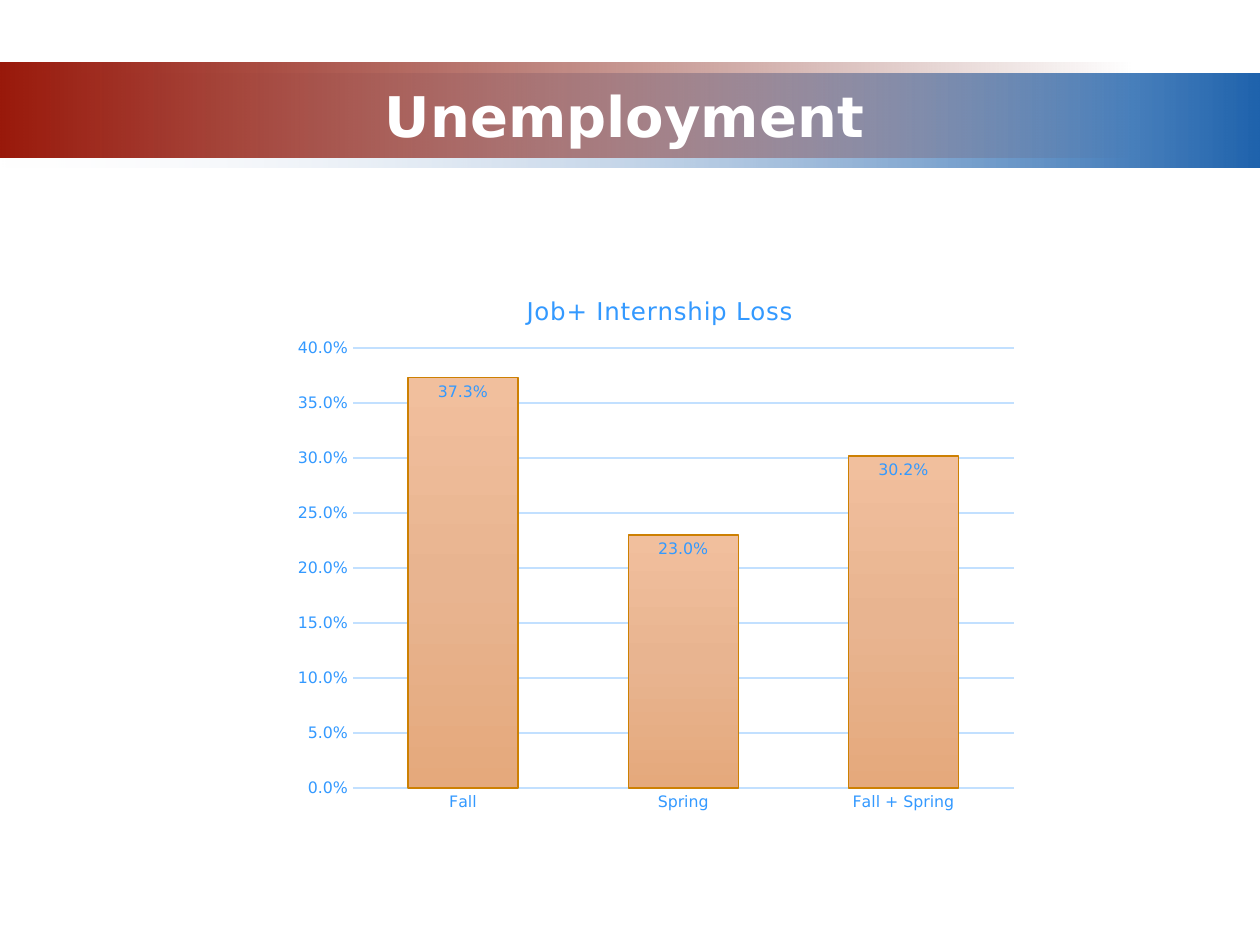
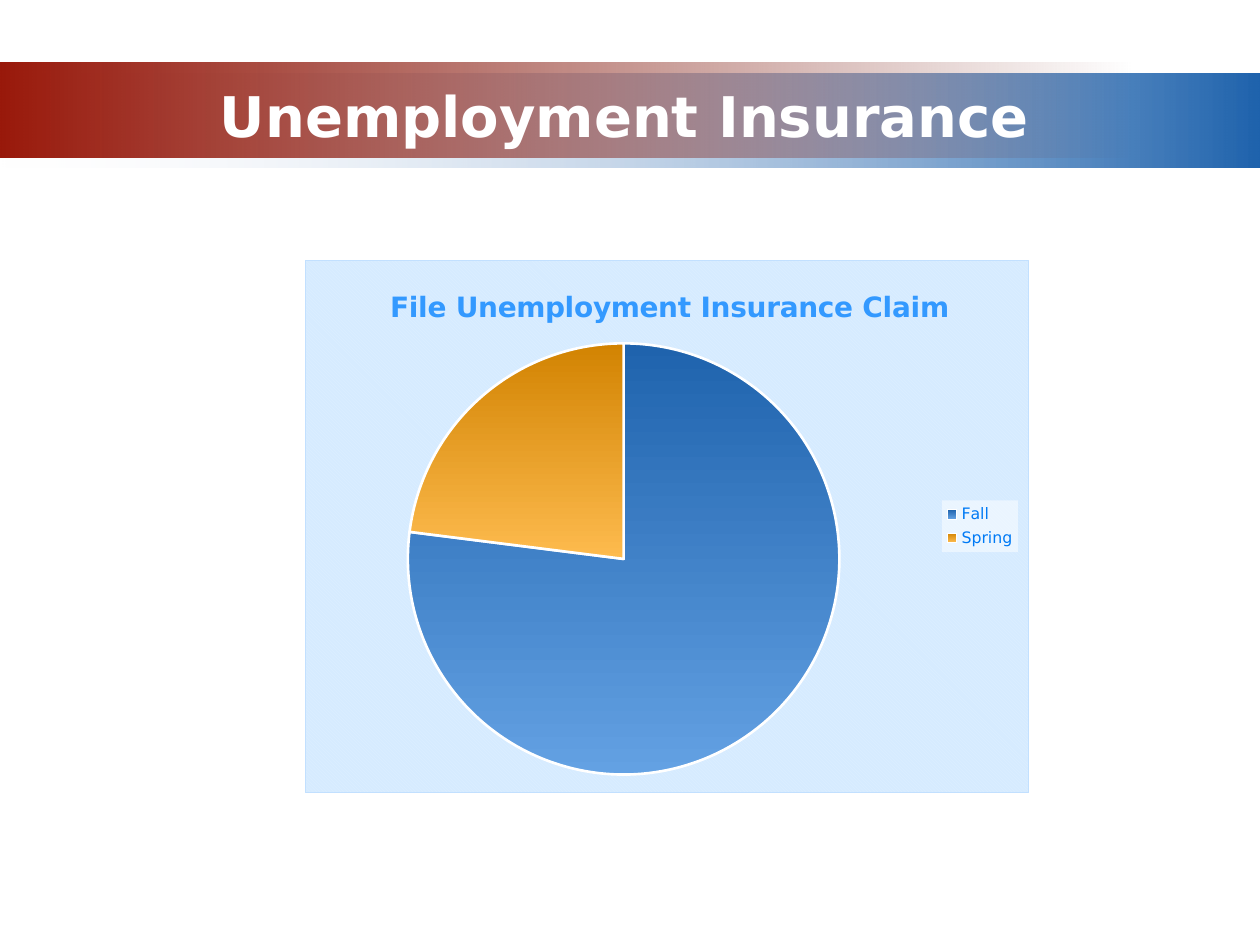
from dataclasses import dataclass

from lxml import etree
from pptx import Presentation
from pptx import util as u
from pptx.chart.data import CategoryChartData
from pptx.dml.color import RGBColor
from pptx.enum import chart as ce, shapes, text
from pptx.oxml.ns import nsdecls, qn
from pptx.oxml import parse_xml

Pt = u.Pt


@dataclass(frozen=True)
class Theme:
    font: str = "DejaVu Sans"
    white: str = "FFFFFF"
    base_text: str = "003366"
    chart_text: str = "3399FF"
    legend_text: str = "007AF5"
    rule: str = "C2E0FF"
    bar_line: str = "CD8002"
    panel: str = "D6EBFF"
    panel_stripe: str = "E0F0FF"
    title_size: int = 32
    bar_title_size: int = 14
    pie_title_size: int = 16
    base_size: int = 10
    label_size: int = 9
    hairline: float = 0.75
    slice_line: float = 1.5
    blue_band: tuple = ((0, "F1F2F7", 0), (100, "1F63AD", 100))
    red_band: tuple = ((0, "99190B", 100), (100, "6D1208", 0))
    bar_fill: tuple = ((0, "F1BF9D", 100), (50, "E8B490", 100), (100, "E5A97C", 100))
    slices: tuple = (
        ((0, "1F63AD", 100), (100, "63A1E3", 100)),
        ((0, "D28302", 100), (100, "FDBB4E", 100)),
    )


T = Theme()


def color_xml(rgb, alpha=100):
    return f'<a:srgbClr val="{rgb}"><a:alpha val="{alpha * 1000}"/></a:srgbClr>'


def add_gradient(sp_pr, stops, angle):
    gs = "".join(f'<a:gs pos="{pos * 1000}">{color_xml(rgb, alpha)}</a:gs>'
                 for pos, rgb, alpha in stops)
    sp_pr.append(parse_xml(
        f'<a:gradFill {nsdecls("a")} rotWithShape="1"><a:gsLst>{gs}</a:gsLst>'
        f'<a:lin ang="{angle * 60000}" scaled="0"/></a:gradFill>'))


def chart_sp_pr(content):
    return parse_xml(f'<c:spPr {nsdecls("c", "a")}>{content}</c:spPr>')


def set_font(font, size, color, bold=False):
    font.name = T.font
    font.size = Pt(size)
    font.bold = bold
    font.color.rgb = RGBColor.from_string(color)


def set_line(line, color, width=T.hairline):
    line.color.rgb = RGBColor.from_string(color)
    line.width = Pt(width)


def set_layout(el, index, x, y, w=None, h=None, inner=False):
    for old in el.findall(qn("c:layout")):
        el.remove(old)
    layout = etree.Element(qn("c:layout"))
    manual = etree.SubElement(layout, qn("c:manualLayout"))
    values = [("layoutTarget", "inner")] if inner else []
    values += [("xMode", "edge"), ("yMode", "edge"), ("x", x), ("y", y)]
    if w is not None:
        values += [("w", w), ("h", h)]
    for name, value in values:
        etree.SubElement(manual, qn(f"c:{name}")).set("val", str(value))
    el.insert(index, layout)


def add_band(s, top, width, stops):
    sp = s.shapes.add_shape(shapes.MSO_SHAPE.RECTANGLE, 0, Pt(top), Pt(width), Pt(54))
    add_gradient(sp._element.spPr, stops, 0)
    sp.line.fill.background()
    sp.shadow.inherit = False


def add_title(s, title):
    tf = s.shapes.add_textbox(Pt(66), Pt(43), Pt(582), Pt(45)).text_frame
    tf.word_wrap = True
    tf.vertical_anchor = text.MSO_ANCHOR.MIDDLE
    tf.text = title
    p = tf.paragraphs[0]
    p.alignment = text.PP_ALIGN.CENTER
    set_font(p.runs[0].font, T.title_size, T.white, True)


def add_titled_slide(prs, title):
    s = prs.slides.add_slide(prs.slide_layouts[6])
    add_band(s, 42, 720, T.blue_band)
    add_band(s, 36, 648, T.red_band)
    add_title(s, title)
    return s


def add_chart(s, kind, box, cats, vals, number_format):
    data = CategoryChartData(number_format=number_format)
    data.categories = cats
    data.add_series("Series 1", vals)
    chart = s.shapes.add_chart(kind, *map(Pt, box), data).chart
    set_font(chart.font, T.base_size, T.base_text)
    return chart


def add_chart_title(chart, title, size, bold, x, y):
    chart.has_title = True
    tf = chart.chart_title.text_frame
    tf.text = title
    r = tf.paragraphs[0].runs[0]
    set_font(r.font, size, T.chart_text, bold)
    set_layout(chart.chart_title._element, 1, x, y)
    return r


def style_axis(axis):
    axis.major_tick_mark = axis.minor_tick_mark = ce.XL_TICK_MARK.NONE
    set_font(axis.tick_labels.font, T.label_size, T.chart_text)


def add_loss_chart(s):
    chart = add_chart(s, ce.XL_CHART_TYPE.COLUMN_CLUSTERED, (162, 152.6, 426.2, 317.5),
                      ("Fall", "Spring", "Fall + Spring"), (0.373, 0.23, 0.302), "0.0%")
    r = add_chart_title(chart, "Job+ Internship Loss", T.bar_title_size, False, 0.32, 0.04)
    r.font._element.set("spc", "30")
    chart.has_legend = False
    set_layout(chart._chartSpace.chart.plotArea, 0, 0.093, 0.146, 0.886, 0.792, True)

    cat, val = chart.category_axis, chart.value_axis
    style_axis(cat)
    style_axis(val)
    set_line(cat.format.line, T.rule)
    val.format.line.fill.background()
    val.minimum_scale, val.maximum_scale, val.major_unit = 0, 0.4, 0.05
    val.tick_labels.number_format = "0.0%"
    val.tick_labels.number_format_is_linked = False
    set_line(val.major_gridlines.format.line, T.rule)

    plot = chart.plots[0]
    plot.vary_by_categories = False
    plot.gap_width, plot.overlap = 100, -24
    ser = plot.series[0]
    add_gradient(ser._element.get_or_add_spPr(), T.bar_fill, 90)
    set_line(ser.format.line, T.bar_line)
    labels = ser.data_labels
    labels.show_value = True
    labels.position = ce.XL_LABEL_POSITION.INSIDE_END
    labels.number_format = "0.0%"
    labels.number_format_is_linked = False
    set_font(labels.font, T.label_size, T.chart_text)


def add_legend(chart):
    chart.has_legend = True
    legend = chart.legend
    legend.position = ce.XL_LEGEND_POSITION.RIGHT
    legend.include_in_layout = False
    set_layout(legend._element, 1, 0.88, 0.451, 0.105, 0.097)
    legend._element.append(chart_sp_pr(f"<a:solidFill>{color_xml(T.white, 50)}</a:solidFill>"))
    set_font(legend.font, T.label_size, T.legend_text)


def add_claim_chart(s):
    chart = add_chart(s, ce.XL_CHART_TYPE.PIE, (174.2, 148.4, 414, 305),
                      ("Fall", "Spring"), (77, 23), "General")
    add_chart_title(chart, "File Unemployment Insurance Claim", T.pie_title_size, True,
                    0.11, 0.045)
    add_legend(chart)
    set_layout(chart._chartSpace.chart.plotArea, 0, 0.141, 0.156, 0.598, 0.81, True)
    chart._chartSpace.chart.addnext(chart_sp_pr(
        f'<a:pattFill prst="dkDnDiag"><a:fgClr>{color_xml(T.panel_stripe)}</a:fgClr>'
        f'<a:bgClr>{color_xml(T.panel)}</a:bgClr></a:pattFill>'
        f'<a:ln w="{Pt(T.hairline)}"><a:solidFill>{color_xml(T.rule)}</a:solidFill></a:ln>'))

    plot = chart.plots[0]
    plot.vary_by_categories = True
    ser = plot.series[0]
    for i, stops in enumerate(T.slices):
        point = ser.points[i]
        add_gradient(ser._element.get_or_add_dPt_for_point(i).get_or_add_spPr(), stops, 90)
        set_line(point.format.line, T.white, T.slice_line)


def main():
    prs = Presentation()
    prs.slide_width, prs.slide_height = Pt(720), Pt(540)
    add_loss_chart(add_titled_slide(prs, "Unemployment"))
    add_claim_chart(add_titled_slide(prs, "Unemployment Insurance"))
    prs.save("out.pptx")


if __name__ == "__main__":
    main()
